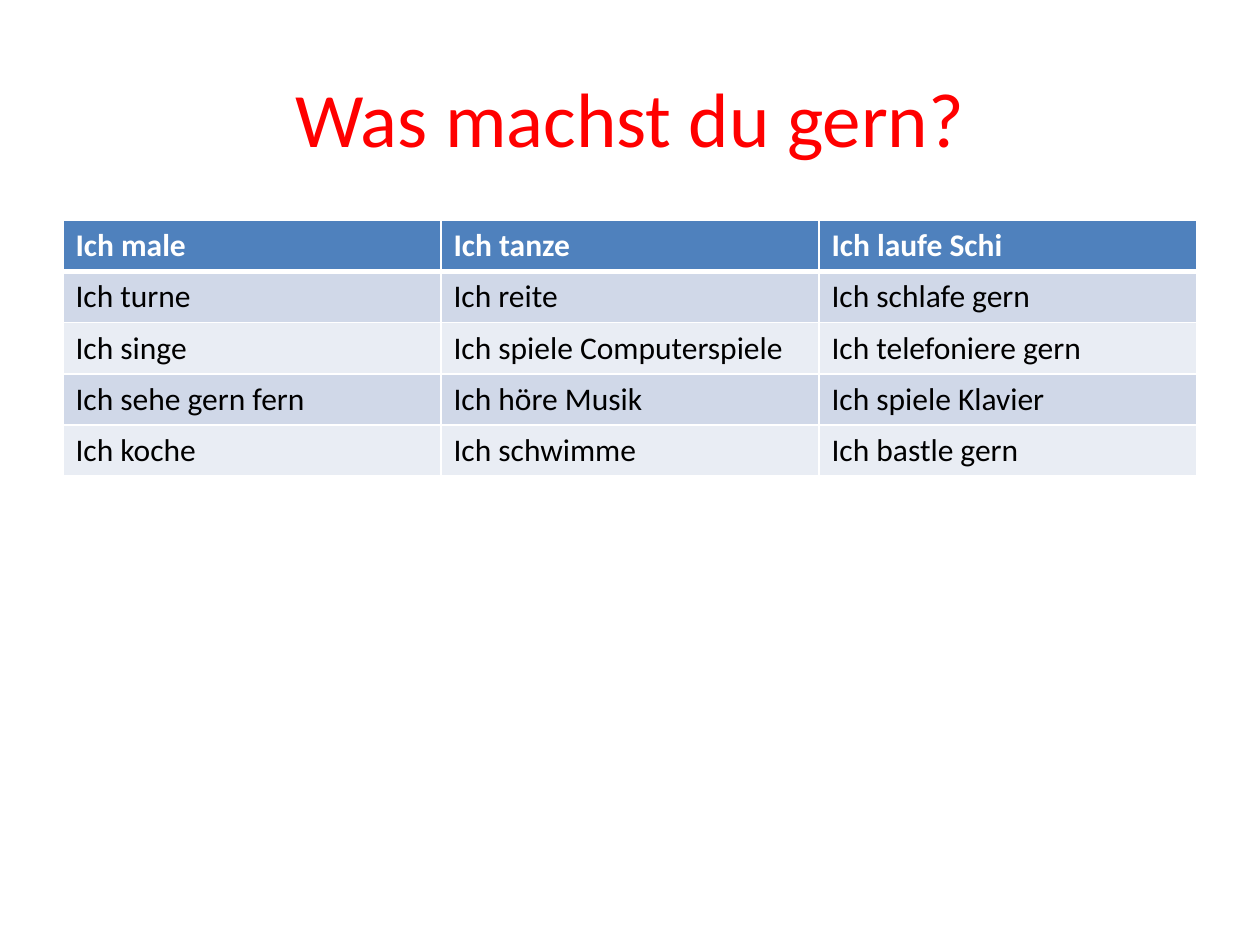
from lxml.etree import SubElement
from pptx import Presentation
from pptx.dml.color import RGBColor
from pptx.enum.text import MSO_ANCHOR, PP_ALIGN
from pptx.oxml.ns import qn
from pptx.util import Pt

TITLE = "Was machst du gern?"
ROWS = [
    ("Ich male", "Ich tanze", "Ich laufe Schi"),
    ("Ich turne", "Ich reite", "Ich schlafe gern"),
    ("Ich singe", "Ich spiele Computerspiele", "Ich telefoniere gern"),
    ("Ich sehe gern fern", "Ich höre Musik", "Ich spiele Klavier"),
    ("Ich koche", "Ich schwimme", "Ich bastle gern"),
]
HEAD, BANDS = "4F81BD", ("E9EDF4", "D0D8E8")
WHITE, BLACK, RED = "FFFFFF", "000000", "FF0000"
LEFT, WIDTH, HIGH = 36, 648, 29.2


def paint(fill, color):
    fill.solid()
    fill.fore_color.rgb = RGBColor.from_string(color)


def style(frame, size, color, bold=False):
    for run in frame.paragraphs[0].runs:
        run.font.name = "Calibri"
        run.font.size = Pt(size)
        run.font.bold = bold
        paint(run.font.fill, color)


def edge(cell, side, width):
    props = cell._tc.get_or_add_tcPr()
    line = SubElement(props, qn(f"a:ln{side}"), w=str(Pt(width)))
    fill = SubElement(line, qn("a:solidFill"))
    SubElement(fill, qn("a:srgbClr"), val=WHITE)


deck = Presentation()
deck.slide_width, deck.slide_height = Pt(720), Pt(540)
slide = deck.slides.add_slide(deck.slide_layouts[5])

title = slide.shapes.title
title.left, title.top = Pt(LEFT), Pt(21.6)
title.width, title.height = Pt(WIDTH), Pt(90)
frame = title.text_frame
frame.text = TITLE
frame.vertical_anchor = MSO_ANCHOR.MIDDLE
frame.paragraphs[0].alignment = PP_ALIGN.CENTER
style(frame, 44, RED)

table = slide.shapes.add_table(
    len(ROWS), len(ROWS[0]), Pt(LEFT), Pt(126), Pt(WIDTH), Pt(HIGH * len(ROWS))
).table
for r, row in enumerate(ROWS):
    table.rows[r].height = Pt(HIGH)
    top = r == 0
    for c, text in enumerate(row):
        cell = table.cell(r, c)
        cell.text_frame.text = text
        style(cell.text_frame, 18, WHITE if top else BLACK, top)
        for side in "LRTB":
            thick = (r, side) in ((0, "B"), (1, "T"))
            edge(cell, side, 3 if thick else 1)
        paint(cell.fill, HEAD if top else BANDS[r % 2])

deck.save("out.pptx")
